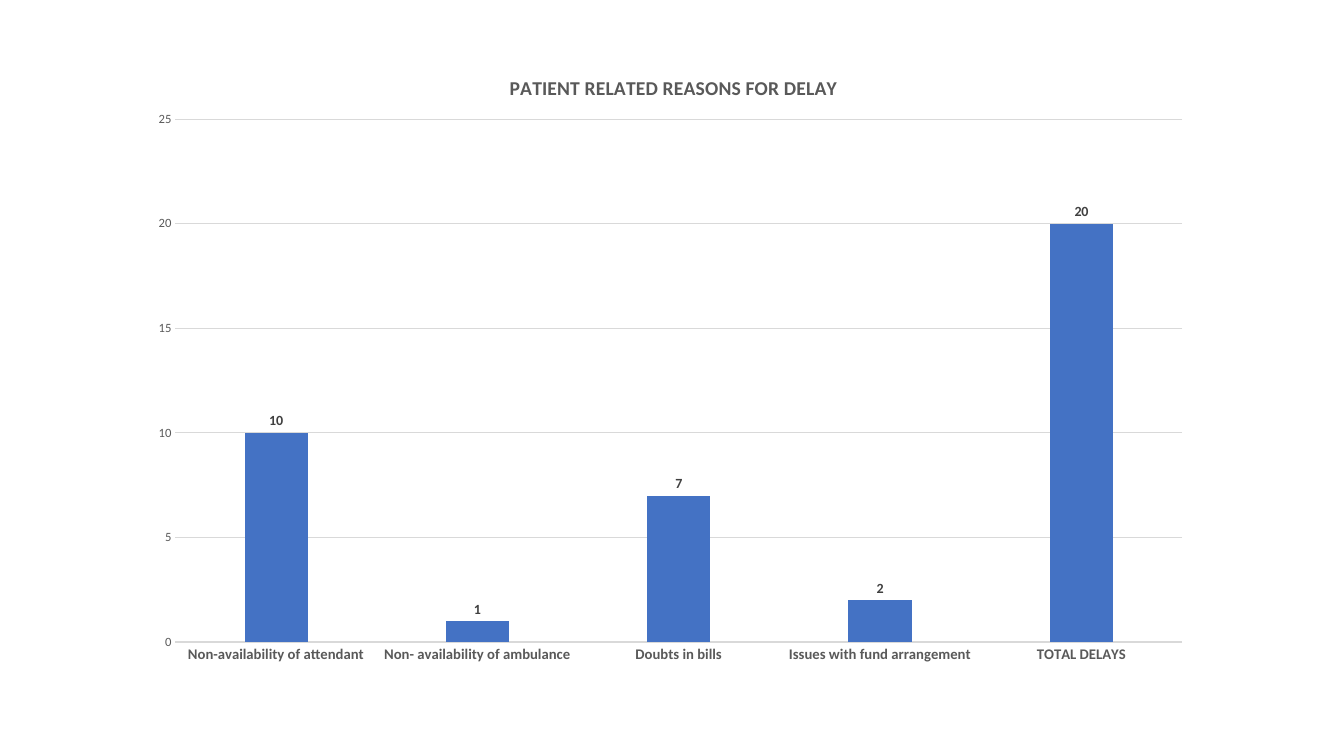
from pptx import Presentation
from pptx.chart.data import CategoryChartData as Data
from pptx.dml.color import RGBColor
from pptx.enum.chart import XL_CHART_TYPE as Kind, XL_LABEL_POSITION as Spot
from pptx.enum.chart import XL_TICK_MARK as Tick
from pptx.oxml import parse_xml
from pptx.oxml.ns import nsdecls, qn
from pptx.util import Pt


def tint(code):
    return RGBColor.from_string(code)


def style(item, form):
    for key, val in form.items():
        setattr(item, key, val)


class Deck:
    face = "Calibri"
    blue, grey, dark, pale = "4472C4", "595959", "404040", "D9D9D9"

    def __init__(self, wide, high):
        self.file = Presentation()
        style(self.file, {"slide_width": Pt(wide), "slide_height": Pt(high)})
        self.slide = self.file.slides.add_slide(self.file.slide_layouts[6])

    def font(self, font, size, color, bold=False):
        style(font, {"name": self.face, "size": Pt(size), "bold": bold})
        font.color.rgb = tint(color)

    def line(self, line):
        line.width = Pt(0.75)
        line.color.rgb = tint(self.pale)

    def place(self, node, index, spots, inner=False):
        for old in node.findall(qn("c:layout")):
            node.remove(old)
        rows = '<c:layoutTarget val="inner"/>' if inner else ""
        rows += '<c:xMode val="edge"/><c:yMode val="edge"/>'
        rows += "".join(f'<c:{key} val="{val}"/>' for key, val in spots.items())
        node.insert(index, parse_xml(
            f'<c:layout {nsdecls("c")}><c:manualLayout>{rows}'
            "</c:manualLayout></c:layout>"))

    def chart(self, box, names, vals):
        data = Data()
        data.categories = names
        data.add_series("Series 1", vals)
        frame = self.slide.shapes.add_chart(
            Kind.COLUMN_CLUSTERED, *map(Pt, box), data)
        chart = frame.chart
        chart.has_legend = False
        self.font(chart.font, 10, "000000")
        self.place(chart.plots[0]._element.getparent(), 0,
                   {"x": 0.036, "y": 0.114, "w": 0.944, "h": 0.83}, True)
        return chart

    def title(self, chart, text):
        title = chart.chart_title
        title.include_in_layout = False
        para = title.text_frame.paragraphs[0]
        run = para.add_run()
        run.text = text
        self.font(run.font, 14, self.grey, True)
        self.place(title._element, 1, {"x": 0.346, "y": 0.037})

    def bars(self, chart):
        plot = chart.plots[0]
        style(plot, {"gap_width": 219, "overlap": -27,
                     "vary_by_categories": False, "has_data_labels": True})
        fill = plot.series[0].format.fill
        fill.solid()
        fill.fore_color.rgb = tint(self.blue)
        style(plot.data_labels, {"show_value": True,
                                 "position": Spot.OUTSIDE_END})
        self.font(plot.data_labels.font, 10, self.dark, True)

    def axes(self, chart):
        cat, val = chart.category_axis, chart.value_axis
        for axis, size, bold in ((cat, 10.5, True), (val, 9, False)):
            style(axis, {"major_tick_mark": Tick.NONE,
                         "minor_tick_mark": Tick.NONE})
            self.font(axis.tick_labels.font, size, self.grey, bold)
        style(val, {"minimum_scale": 0, "maximum_scale": 25, "major_unit": 5,
                    "has_major_gridlines": True})
        self.line(cat.format.line)
        self.line(val.major_gridlines.format.line)
        val.format.line.fill.background()


def main():
    deck = Deck(960, 540)
    delays = {
        "Non-availability of attendant": 10,
        "Non- availability of ambulance": 1,
        "Doubts in bills": 7,
        "Issues with fund arrangement": 2,
        "TOTAL DELAYS": 20,
    }
    chart = deck.chart((97.92, 33.84, 761.76, 450), delays.keys(),
                       delays.values())
    deck.title(chart, "PATIENT RELATED REASONS FOR DELAY")
    deck.bars(chart)
    deck.axes(chart)
    deck.file.save("out.pptx")


if __name__ == "__main__":
    main()
